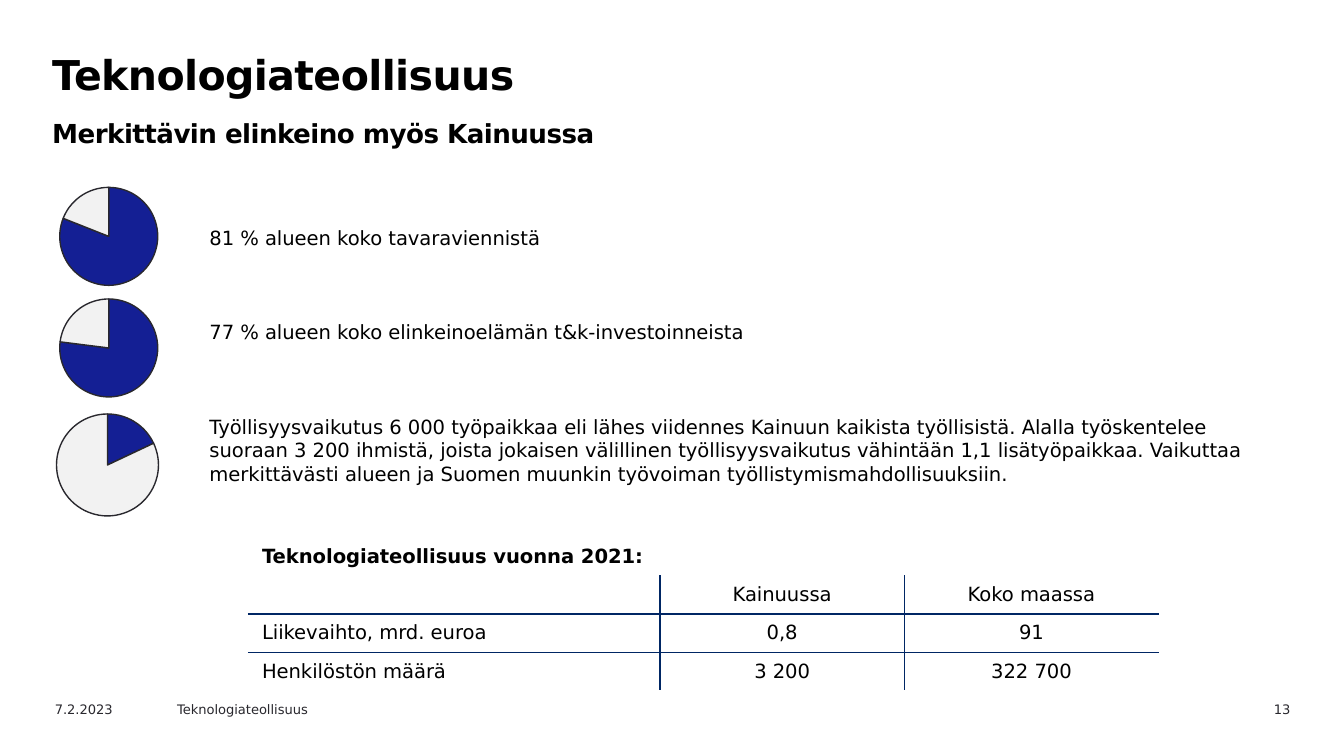
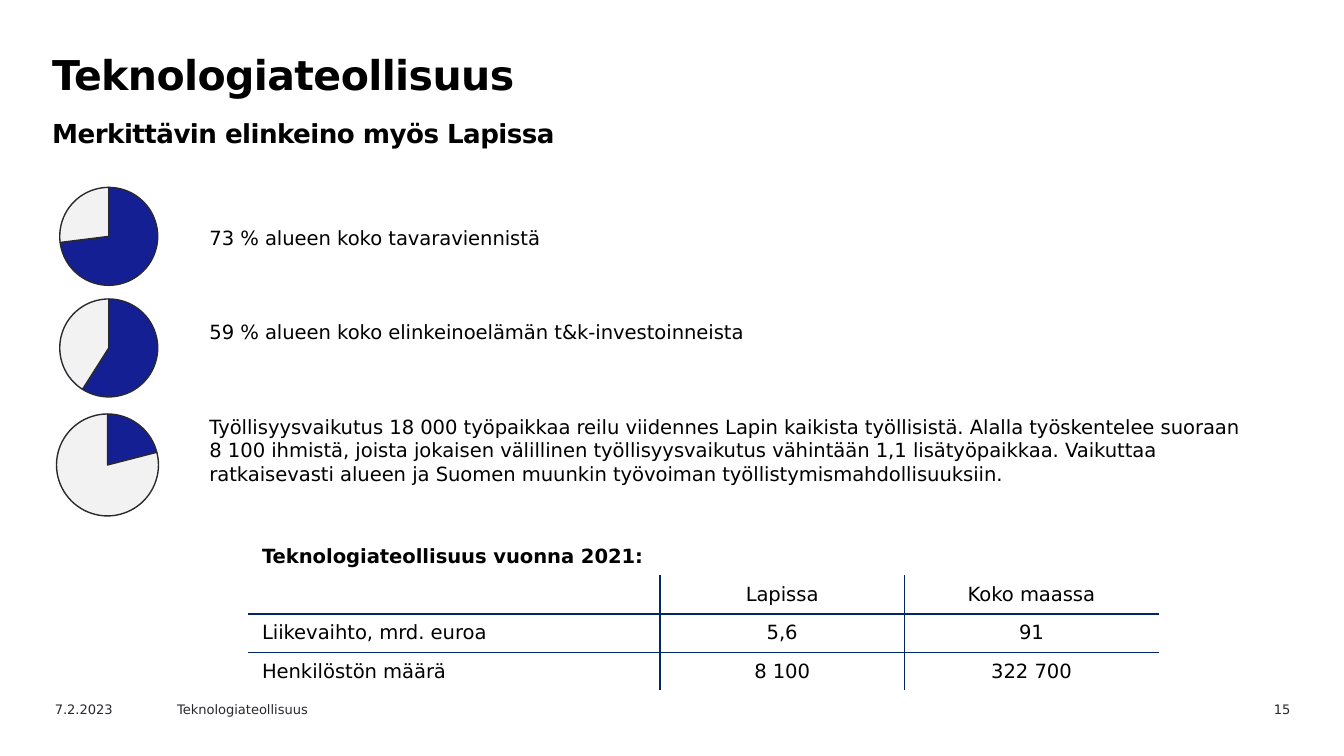
from lxml.etree import SubElement
from pptx import Presentation
from pptx.chart.data import CategoryChartData
from pptx.dml.color import RGBColor
from pptx.enum.chart import XL_CHART_TYPE
from pptx.enum.text import MSO_ANCHOR, PP_ALIGN
from pptx.oxml import parse_xml
from pptx.oxml.ns import nsdecls, qn
from pptx.util import Inches, Pt

FONT = "DejaVu Sans"
BLACK = RGBColor(0x00, 0x00, 0x00)
DARK_GREY = RGBColor(0x29, 0x28, 0x2E)
LIGHT_GREY = RGBColor(0xF2, 0xF2, 0xF2)
PIE_BLUE = RGBColor(0x14, 0x1F, 0x94)
BORDER_BLUE = RGBColor(0x00, 0x26, 0x64)

SECTOR = "Teknologiateollisuus"
DATE = "7.2.2023"
BODY_SIZE = 10.5
COLUMN_WIDTHS = (3.06, 1.82, 1.89)
PIE_BOXES = ((0.31, 1.26, 1), (0.31, 2.09, 1), (0.28, 2.94, 1.04))  # left, top, side

REGIONS = (
    {
        "page": "13",
        "in_region": "Kainuussa",
        "shares": (81, 77, 18),
        "employment": "Työllisyysvaikutus 6 000 työpaikkaa eli lähes viidennes Kainuun kaikista "
                      "työllisistä. Alalla työskentelee suoraan 3 200 ihmistä, joista jokaisen "
                      "välillinen työllisyysvaikutus vähintään 1,1 lisätyöpaikkaa. Vaikuttaa "
                      "merkittävästi alueen ja Suomen muunkin työvoiman "
                      "työllistymismahdollisuuksiin.",
        "turnover": "0,8",
        "staff": "3 200",
    },
    {
        "page": "15",
        "in_region": "Lapissa",
        "shares": (73, 59, 21),
        "employment": "Työllisyysvaikutus 18 000 työpaikkaa reilu viidennes Lapin kaikista "
                      "työllisistä. Alalla työskentelee suoraan\n8 100 ihmistä, joista jokaisen "
                      "välillinen työllisyysvaikutus vähintään 1,1 lisätyöpaikkaa. Vaikuttaa "
                      "ratkaisevasti alueen ja Suomen muunkin työvoiman "
                      "työllistymismahdollisuuksiin.",
        "turnover": "5,6",
        "staff": "8 100",
    },
)


class RegionDeck:
    """Holds the shared style and the slide being built."""

    def __init__(self):
        self.presentation = Presentation()
        self.presentation.slide_width = Inches(10)
        self.presentation.slide_height = Inches(10) * 9 // 16
        self.slide = None

    def new_slide(self):
        self.slide = self.presentation.slides.add_slide(self.presentation.slide_layouts[6])

    def style(self, font, size, color=BLACK, bold=False):
        font.name = FONT
        font.size = Pt(size)
        font.bold = bold
        font.color.rgb = color

    def text_frame(self, left, top, width, height):
        box = self.slide.shapes.add_textbox(
            Inches(left), Inches(top), Inches(width), Inches(height))
        box.text_frame.word_wrap = True
        return box.text_frame

    def title(self, heading, subheading):
        paragraph = self.text_frame(0.29, 0.31, 8.74, 0.71).paragraphs[0]
        paragraph.line_spacing = Pt(27)
        self.style(paragraph.font, 22, bold=True)
        for text, size in ((heading, 22), (subheading, 14)):
            if paragraph.runs:
                paragraph.add_line_break()
            run = paragraph.add_run()
            run.text = text
            run.font.size = Pt(size)
            run.font._element.set("spc", "-30")

    def footer(self, page):
        for text, left, width, alignment in (
                (page, 8.76, 0.94, PP_ALIGN.RIGHT),
                (DATE, 0.31, 1, PP_ALIGN.LEFT),
                (SECTOR, 1.22, 1.42, PP_ALIGN.LEFT)):
            paragraph = self.text_frame(left, 5.17, width, 0.18).paragraphs[0]
            paragraph.text = text
            paragraph.alignment = alignment
            self.style(paragraph.font, 7, DARK_GREY)

    def facts(self, texts):
        frame = self.text_frame(1.46, 1.63, 8.19, 2.42)
        for index, text in enumerate(texts):
            paragraph = frame.add_paragraph() if index else frame.paragraphs[0]
            paragraph.text = text
            paragraph.space_before = Pt(38 if index else 0)
            self.style(paragraph.font, BODY_SIZE)

    def pie(self, left, top, side, share):
        data = CategoryChartData()
        data.categories = ["1", "2"]
        data.add_series("Series 1", (share, 100 - share))
        chart = self.slide.shapes.add_chart(
            XL_CHART_TYPE.PIE, Inches(left), Inches(top), Inches(side), Inches(side), data).chart
        chart.has_legend = False
        chart.has_title = False
        self.style(chart.font, 18, DARK_GREY)
        plot = chart.plots[0]
        plot.vary_by_categories = True
        for index, color in enumerate((PIE_BLUE, LIGHT_GREY)):
            slice_format = plot.series[0].points[index].format
            slice_format.fill.solid()
            slice_format.fill.fore_color.rgb = color
            slice_format.line.color.rgb = DARK_GREY
            slice_format.line.width = Pt(0.75)
        # Centre the pie within its frame
        plot_area = chart._chartSpace.chart.plotArea
        for layout in plot_area.findall(qn("c:layout")):
            plot_area.remove(layout)
        plot_area.insert(0, parse_xml(
            f'<c:layout {nsdecls("c")}><c:manualLayout><c:layoutTarget val="inner"/>'
            '<c:xMode val="edge"/><c:yMode val="edge"/><c:x val="0.135"/><c:y val="0.135"/>'
            '<c:w val="0.73"/><c:h val="0.73"/></c:manualLayout></c:layout>'))

    def border(self, cell, sides):
        properties = cell._tc.get_or_add_tcPr()
        for side in sides:
            line = SubElement(properties, qn(f"a:ln{side}"), w=str(Pt(1)))
            fill = SubElement(line, qn("a:solidFill"))
            SubElement(fill, qn("a:srgbClr"), val=str(BORDER_BLUE))

    def table(self, rows):
        last_row, last_column = len(rows) - 1, len(COLUMN_WIDTHS) - 1
        table = self.slide.shapes.add_table(
            len(rows), len(COLUMN_WIDTHS), Inches(1.85), Inches(4),
            Inches(sum(COLUMN_WIDTHS)), Inches(1.14)).table
        table.first_row = False
        table.horz_banding = False
        for column, width in zip(table.columns, COLUMN_WIDTHS):
            column.width = Inches(width)
        for row, texts in enumerate(rows):
            for column, text in enumerate(texts):
                cell = table.cell(row, column)
                cell.vertical_anchor = MSO_ANCHOR.MIDDLE
                paragraph = cell.text_frame.paragraphs[0]
                paragraph.alignment = PP_ALIGN.CENTER if column else PP_ALIGN.LEFT
                self.style(paragraph.font, BODY_SIZE, bold=row == 0)
                if text:
                    paragraph.text = text
                else:  # keeps an empty cell from growing
                    SubElement(paragraph._p, qn("a:endParaRPr"), sz=str(int(BODY_SIZE * 100)))
                # Inner grid lines only, none around the heading row
                if row:
                    inner = (("L", column > 0), ("R", column < last_column),
                             ("T", row > 1), ("B", row < last_row))
                    self.border(cell, [side for side, shown in inner if shown])
                cell.fill.background()
        table.cell(0, 0).merge(table.cell(0, last_column))


def main():
    deck = RegionDeck()
    for region in REGIONS:
        deck.new_slide()
        deck.title(SECTOR, f"Merkittävin elinkeino myös {region['in_region']}")
        deck.footer(region["page"])
        # Shares and what they stand for
        exports, research, _ = region["shares"]
        deck.facts((
            f"{exports} % alueen koko tavaraviennistä",
            f"{research} % alueen koko elinkeinoelämän t&k-investoinneista",
            region["employment"],
        ))
        for box, share in zip(PIE_BOXES, region["shares"]):
            deck.pie(*box, share)
        # Key figures
        deck.table((
            (f"{SECTOR} vuonna 2021:", "", ""),
            ("", region["in_region"], "Koko maassa"),
            ("Liikevaihto, mrd. euroa", region["turnover"], "91"),
            ("Henkilöstön määrä", region["staff"], "322 700"),
        ))
    deck.presentation.save("out.pptx")


if __name__ == "__main__":
    main()
